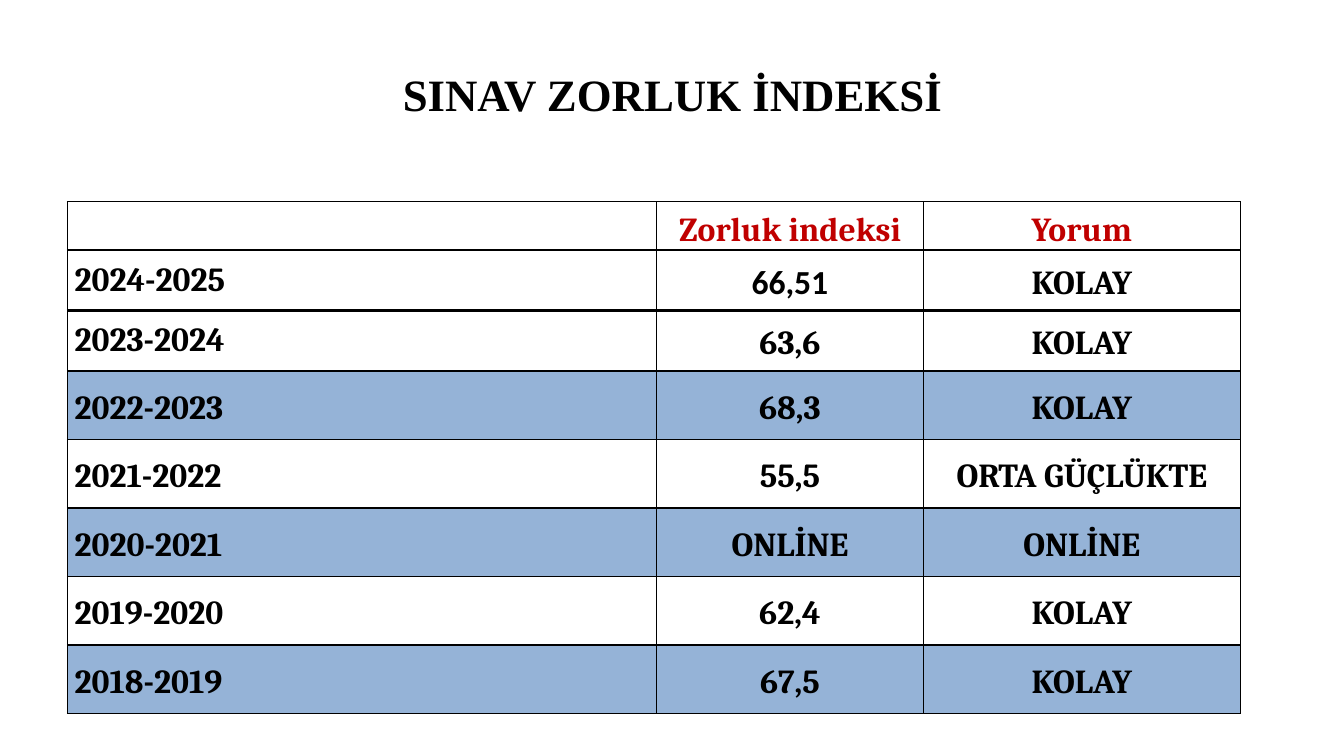
from lxml import etree
from pptx import Presentation
from pptx.dml.color import RGBColor
from pptx.enum.text import MSO_ANCHOR, PP_ALIGN
from pptx.oxml.ns import qn
from pptx.util import Pt

PX = 9144
LEFT, CENTER = PP_ALIGN.LEFT, PP_ALIGN.CENTER
MIDDLE, BOTTOM = MSO_ANCHOR.MIDDLE, MSO_ANCHOR.BOTTOM
BLACK, RED, BLUE = "000000", "C00000", "95B3D7"


def write(frame, text, size=24, font="Cambria", color=BLACK, align=CENTER, gap=1.15):
    par = frame.paragraphs[0]
    par.alignment = align
    par.line_spacing = gap
    run = par.add_run()
    run.text = text
    run.font.size = Pt(size)
    run.font.name = font
    run.font.bold = True
    run.font.color.rgb = RGBColor.from_string(color)


def edge(cell, sides):
    props = cell._tc.get_or_add_tcPr()
    for i, (side, width) in enumerate(sides.items()):
        line = etree.Element(qn("a:ln" + side), w=str(Pt(width)))
        fill = etree.SubElement(line, qn("a:solidFill"))
        etree.SubElement(fill, qn("a:srgbClr"), val=BLACK)
        props.insert(i, line)


deck = Presentation()
deck.slide_width, deck.slide_height = 1333 * PX, 750 * PX
slide = deck.slides.add_slide(deck.slide_layouts[5])

title = slide.shapes.title
title.left, title.top, title.width, title.height = [n * PX for n in (67, 30, 1200, 125)]
title.text_frame.vertical_anchor = MIDDLE
write(title.text_frame, "SINAV ZORLUK İNDEKSİ", size=32, font="Times New Roman", gap=1.0)

rows = [
    ("", "Zorluk indeksi", "Yorum"),
    ("2024-2025", "66,51", "KOLAY"),
    ("2023-2024", "63,6", "KOLAY"),
    ("2022-2023", "68,3", "KOLAY"),
    ("2021-2022", "55,5", "ORTA GÜÇLÜKTE"),
    ("2020-2021", "ONLİNE", "ONLİNE"),
    ("2019-2020", "62,4", "KOLAY"),
    ("2018-2019", "67,5", "KOLAY"),
]
widths = [584, 265, 314]
heights = [48, 60, 60] + [68] * 5
rules = [1, 2.25, 2.25] + [1] * 6

frame = slide.shapes.add_table(
    len(rows), len(widths), 67 * PX, 200 * PX, sum(widths) * PX, sum(heights) * PX
)
table = frame.table
table.first_row = table.horz_banding = False
for col, width in zip(table.columns, widths):
    col.width = width * PX
for row, height in zip(table.rows, heights):
    row.height = height * PX

for r, row in enumerate(rows):
    for c, text in enumerate(row):
        cell = table.cell(r, c)
        cell.margin_left = cell.margin_right = 7 * PX
        cell.margin_top = cell.margin_bottom = 0
        cell.vertical_anchor = MIDDLE if r else BOTTOM
        if r in (3, 5, 7):
            cell.fill.solid()
            cell.fill.fore_color.rgb = RGBColor.from_string(BLUE)
        else:
            cell.fill.background()
        edge(cell, {"L": 1, "R": 1, "T": rules[r], "B": rules[r + 1]})
        if text:
            write(
                cell.text_frame,
                text,
                font="Calibri" if text == "66,51" else "Cambria",
                color=BLACK if r else RED,
                align=CENTER if c else LEFT,
                gap=1.0 if c == 0 and r < 3 else 1.15,
            )

deck.save("out.pptx")
